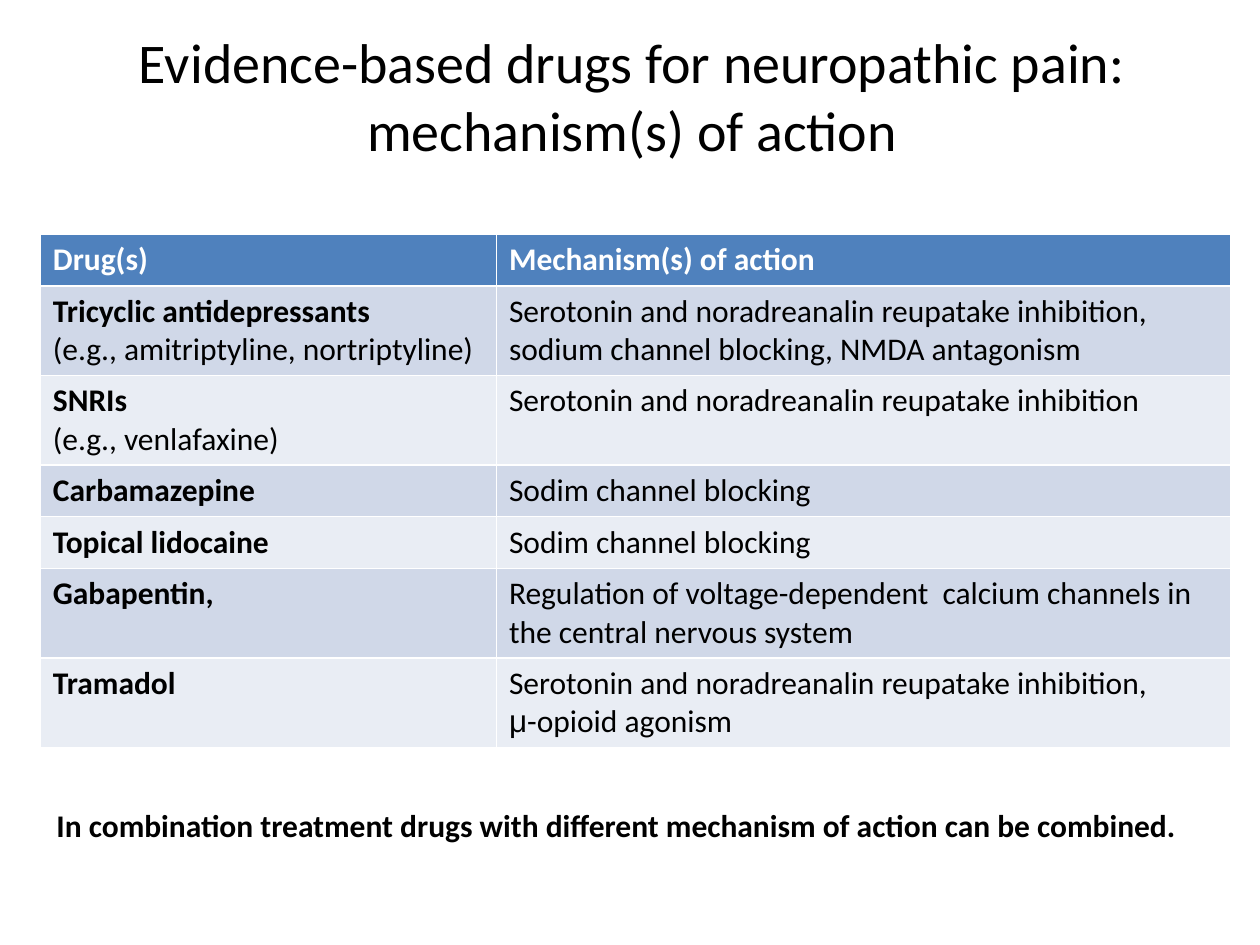
from dataclasses import dataclass

from pptx import Presentation
from pptx.dml.color import RGBColor
from pptx.enum.text import MSO_ANCHOR, PP_ALIGN
from pptx.util import Inches, Pt

LEFT, CENTER = PP_ALIGN.LEFT, PP_ALIGN.CENTER
MIDDLE = MSO_ANCHOR.MIDDLE
TITLE_ONLY = 5


@dataclass(frozen=True)
class Theme:
    font: str = "Calibri"
    symbol_font: str = "Arial"
    title_size: int = 32
    body_size: int = 18
    ink: RGBColor = RGBColor(0x00, 0x00, 0x00)
    header_ink: RGBColor = RGBColor(0xFF, 0xFF, 0xFF)
    header_fill: RGBColor = RGBColor(0x4F, 0x81, 0xBD)
    bands: tuple = (RGBColor(0xD0, 0xD8, 0xE8), RGBColor(0xE9, 0xED, 0xF4))


THEME = Theme()

TITLE = "Evidence-based drugs for neuropathic pain: mechanism(s) of action"
HEADINGS = ("Drug(s)", "Mechanism(s) of action")
DRUGS = [
    ("Tricyclic antidepressants", "(e.g., amitriptyline, nortriptyline)",
     ["Serotonin and noradreanalin reupatake inhibition, "
      "sodium channel blocking, NMDA antagonism"]),
    ("SNRIs", "(e.g., venlafaxine)",
     ["Serotonin and noradreanalin reupatake inhibition"]),
    ("Carbamazepine", None, ["Sodim channel blocking"]),
    ("Topical lidocaine", None, ["Sodim channel blocking"]),
    ("Gabapentin,", None,
     ["Regulation of voltage-dependent  calcium channels in the central nervous system"]),
    ("Tramadol", None,
     ["Serotonin and noradreanalin reupatake inhibition,", "μ-opioid agonism"]),
]
CONCLUSION = ("In combination treatment drugs with different mechanism of action "
              "can be combined.")


def write(paragraph, text, *, size=THEME.body_size, color=THEME.ink,
          bold=False, align=LEFT, font=THEME.font):
    paragraph.alignment = align
    run = paragraph.add_run()
    run.text = text
    run.font.name = font
    run.font.size = Pt(size)
    run.font.bold = bold
    run.font.color.rgb = color


def write_mechanism(paragraph, text):
    if text.startswith("μ"):
        write(paragraph, text[0], font=THEME.symbol_font)
        text = text[1:]
    write(paragraph, text)


def fill_cell(cell, color):
    cell.fill.solid()
    cell.fill.fore_color.rgb = color
    return cell.text_frame


def place_title(slide, left, top, width, height):
    title = slide.shapes.title
    title.left, title.top, title.width, title.height = left, top, width, height
    title.text_frame.vertical_anchor = MIDDLE
    write(title.text_frame.paragraphs[0], TITLE,
          size=THEME.title_size, align=CENTER)


def place_drug_table(slide, left, top, width, height):
    frame = slide.shapes.add_table(len(DRUGS) + 1, len(HEADINGS),
                                   left, top, width, height)
    table = frame.table
    drug_width = Inches(3.62)
    table.columns[0].width = drug_width
    table.columns[1].width = width - drug_width
    for row in table.rows:
        row.height = Inches(0.41)
    frame.height = height

    for column, heading in enumerate(HEADINGS):
        text = fill_cell(table.cell(0, column), THEME.header_fill)
        write(text.paragraphs[0], heading, color=THEME.header_ink, bold=True)

    for row, (drug, examples, mechanisms) in enumerate(DRUGS, start=1):
        band = THEME.bands[(row - 1) % len(THEME.bands)]
        drug_text = fill_cell(table.cell(row, 0), band)
        write(drug_text.paragraphs[0], drug, bold=True)
        if examples:
            write(drug_text.add_paragraph(), examples)
        mechanism_text = fill_cell(table.cell(row, 1), band)
        write_mechanism(mechanism_text.paragraphs[0], mechanisms[0])
        for mechanism in mechanisms[1:]:
            write_mechanism(mechanism_text.add_paragraph(), mechanism)


def place_conclusion(slide, left, top, width, height):
    conclusion = slide.shapes.add_textbox(left, top, width, height).text_frame
    conclusion.word_wrap = False
    write(conclusion.paragraphs[0], CONCLUSION, bold=True)


def main():
    deck = Presentation()
    deck.slide_width, deck.slide_height = Inches(10), Inches(7.5)
    slide = deck.slides.add_slide(deck.slide_layouts[TITLE_ONLY])
    place_title(slide, Inches(0.52), Inches(0.13), Inches(9), Inches(1.25))
    place_drug_table(slide, Inches(0.32), Inches(1.86), Inches(9.45), Inches(4.02))
    place_conclusion(slide, Inches(0.35), Inches(6.35), Inches(9.17), Inches(0.4))
    deck.save("out.pptx")


if __name__ == "__main__":
    main()
